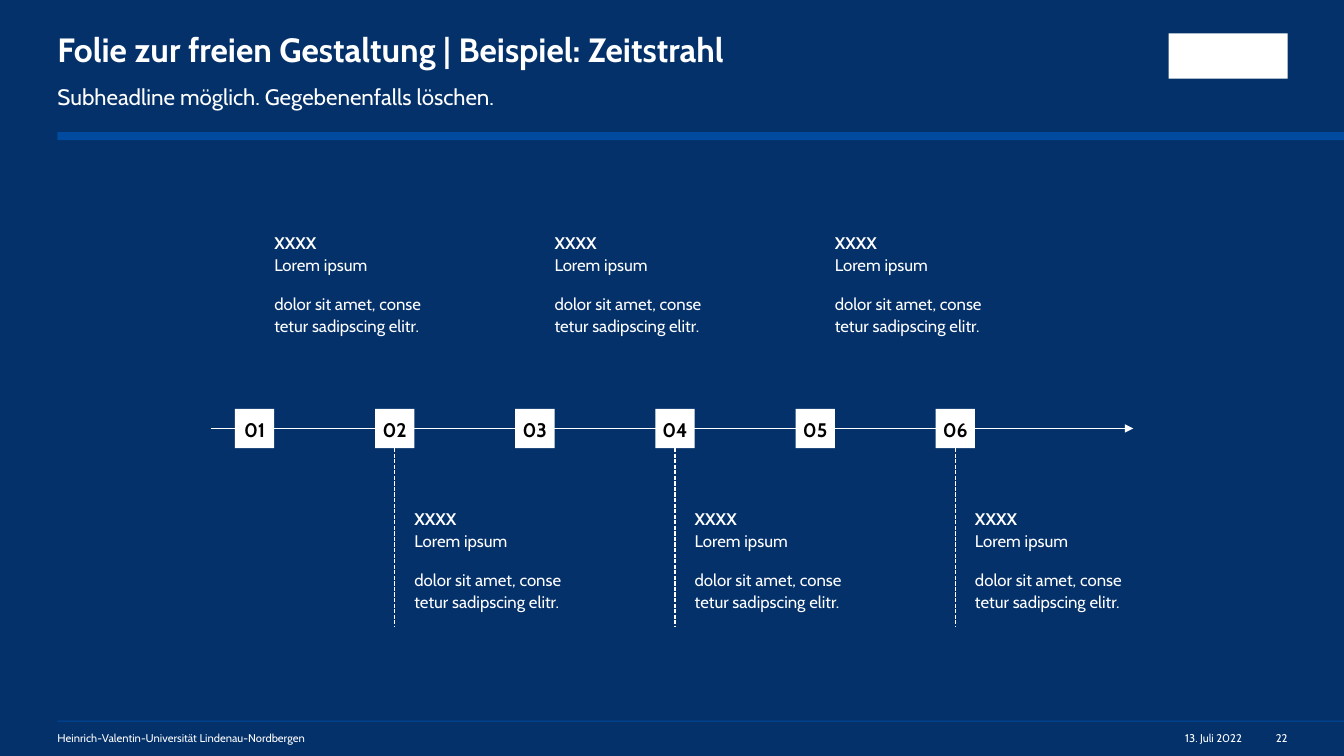
"""Build a timeline slide with six numbered milestones."""
import pptx
import pptx.dml.color
import pptx.enum.dml
import pptx.enum.shapes
import pptx.enum.text
import pptx.oxml.ns
import pptx.util
from lxml import etree

Inches = pptx.util.Inches
Pt = pptx.util.Pt
RGBColor = pptx.dml.color.RGBColor
ALIGN = pptx.enum.text.PP_ALIGN
ANCHOR = pptx.enum.text.MSO_ANCHOR
RECTANGLE = pptx.enum.shapes.MSO_SHAPE.RECTANGLE

NAVY = RGBColor(0x04, 0x31, 0x6A)
BLUE = RGBColor(0x00, 0x4A, 0x9F)
WHITE = RGBColor(0xFF, 0xFF, 0xFF)
BLACK = RGBColor(0x00, 0x00, 0x00)
FONT = "Cabin"

TITLE = "Folie zur freien Gestaltung | Beispiel: Zeitstrahl"
SUBTITLE = "Subheadline möglich. Gegebenenfalls löschen."
FOOTERS = [
    ("Heinrich-Valentin-Universität Lindenau-Nordbergen", 0.57, 5.98, ALIGN.LEFT),
    ("13. Juli 2022", 11.32, 1.0, ALIGN.RIGHT),
    ("22", 12.47, 0.3, ALIGN.RIGHT),
]
ENTRY = ("XXXX", "Lorem ipsum", "dolor sit amet, conse\vtetur sadipscing elitr.")
MILESTONES = [(f"{number:02d}", *ENTRY) for number in range(1, 7)]

MARGIN = 0.57
AXIS_START, AXIS_END, AXIS_Y = 2.09, 11.24, 4.25
FIRST_BOX, PITCH, BOX = 2.33, 1.39, 0.39
UPPER_TEXT, LOWER_TEXT, DASH_END = 2.29, 5.03, 6.22


def format_paragraph(para, size, color=WHITE, bold=False, align=ALIGN.LEFT, spacing=1.0, after=0):
    para.alignment = align
    para.line_spacing = spacing
    para.space_after = Pt(after)
    for span in para.runs:
        span.font.name = FONT
        span.font.size = Pt(size)
        span.font.bold = bold
        span.font.color.rgb = color


def clear_insets(frame):
    frame.margin_left = frame.margin_right = frame.margin_top = frame.margin_bottom = 0


def add_text(page, text, left, top, width, height, size, **style):
    box = page.shapes.add_textbox(Inches(left), Inches(top), Inches(width), Inches(height))
    frame = box.text_frame
    frame.word_wrap = True
    clear_insets(frame)
    frame.text = text
    for para in frame.paragraphs:
        format_paragraph(para, size, **style)
    return frame


def add_block(page, left, top, width, height, color):
    block = page.shapes.add_shape(RECTANGLE, Inches(left), Inches(top), Inches(width), Inches(height))
    block.shadow.inherit = False
    block.fill.solid()
    block.fill.fore_color.rgb = color
    block.line.fill.background()
    return block


def add_line(page, left, top, right, bottom):
    line = page.shapes.add_connector(
        pptx.enum.shapes.MSO_CONNECTOR.STRAIGHT, Inches(left), Inches(top), Inches(right), Inches(bottom))
    line.line.color.rgb = WHITE
    line.line.width = Pt(1)
    etree.SubElement(line._element.spPr, pptx.oxml.ns.qn("a:effectLst"))
    return line


def add_milestone(page, index, number, heading, subject, body):
    left = FIRST_BOX + index * PITCH
    center = left + BOX / 2
    box = add_block(page, left, AXIS_Y - BOX / 2, BOX, BOX, WHITE)
    frame = box.text_frame
    clear_insets(frame)
    frame.vertical_anchor = ANCHOR.MIDDLE
    frame.text = number
    format_paragraph(frame.paragraphs[0], 14, BLACK, True, ALIGN.CENTER, 1.1, 12)

    below = index % 2 == 1
    text_top = LOWER_TEXT if below else UPPER_TEXT
    frame = add_text(page, f"{heading}\v{subject}\n{body}", left + BOX, text_top, 1.55, 1.04, 12,
                     spacing=1.1, after=12)
    frame.word_wrap = False
    frame.paragraphs[0].runs[0].font.bold = True
    if below:
        dash = add_line(page, center, AXIS_Y + BOX / 2, center, DASH_END)
        dash.line.dash_style = pptx.enum.dml.MSO_LINE.SQUARE_DOT
        dash.begin_connect(box, 2)


def main():
    deck = pptx.Presentation()
    deck.slide_width, deck.slide_height = Inches(13.33), Inches(7.5)
    page = deck.slides.add_slide(deck.slide_layouts[6])
    page.background.fill.solid()
    page.background.fill.fore_color.rgb = NAVY

    for top, height in ((7.15, 0.01), (1.31, 0.08)):
        add_block(page, MARGIN, top, 13.33 - MARGIN, height, BLUE)
    add_block(page, 11.59, 0.33, 1.18, 0.45, WHITE)

    add_text(page, TITLE, MARGIN, 0.33, 7.49, 0.36, 24, bold=True, spacing=0.9)
    add_text(page, SUBTITLE, MARGIN, 0.8, 7.29, 0.27, 16, spacing=1.1, after=8)

    axis = add_line(page, AXIS_START, AXIS_Y, AXIS_END, AXIS_Y)
    etree.SubElement(axis.line._get_or_add_ln(), pptx.oxml.ns.qn("a:tailEnd"), type="triangle")
    for index, milestone in enumerate(MILESTONES):
        add_milestone(page, index, *milestone)

    for text, left, width, align in FOOTERS:
        add_text(page, text, left, 7.26, width, 0.13, 8, align=align)

    deck.save("out.pptx")


if __name__ == "__main__":
    main()
